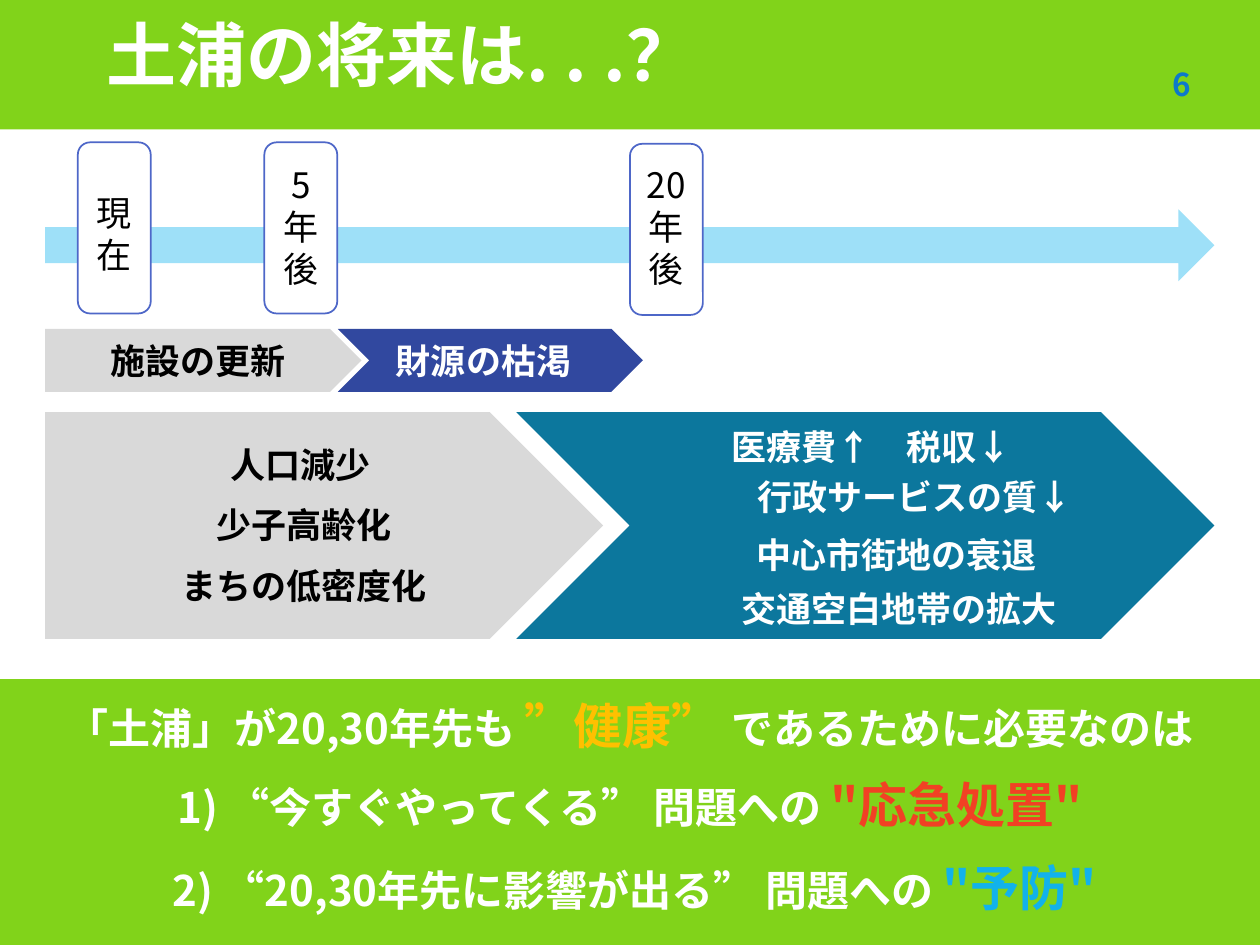
from dataclasses import dataclass

from lxml.etree import SubElement
from pptx import Presentation
from pptx.dml.color import RGBColor
from pptx.enum.shapes import MSO_SHAPE
from pptx.enum.text import MSO_ANCHOR, MSO_AUTO_SIZE, PP_ALIGN
from pptx.oxml.ns import qn
from pptx.slide import Slide
from pptx.util import Cm, Pt

FONT = "Noto Sans CJK JP"
COLOURS = {
    "white": "FFFFFF", "black": "000000", "green": "81D31A", "sky": "9EE0F8",
    "outline": "4E67C8", "navy": "31489F", "grey": "D9D9D9", "teal": "0C779D",
    "number": "0D79CA", "gold": "FFC000", "red": "F14124", "blue": "12B2EB",
}
PAGE_WIDTH, PAGE_HEIGHT = 25.4, 19.05
LEFT_EDGE = 0.91


@dataclass(frozen=True)
class Area:
    left: float
    top: float
    width: float
    height: float

    def lengths(self) -> tuple[Cm, Cm, Cm, Cm]:
        return Cm(self.left), Cm(self.top), Cm(self.width), Cm(self.height)


@dataclass(frozen=True)
class Block:
    kind: MSO_SHAPE
    area: Area
    fill: str
    line: str | None = None


@dataclass(frozen=True)
class Span:
    text: str
    colour: str = "white"
    size: int = 20
    bold: bool = True


@dataclass(frozen=True)
class Label:
    area: Area
    spans: tuple[Span, ...]


@dataclass(frozen=True)
class Marker:
    text: str
    left: float
    top: float
    text_top: float
    text_height: float


def colour(name: str) -> RGBColor:
    return RGBColor.from_string(COLOURS[name])


def apply(target: object, formats: dict[str, object]) -> None:
    for name, value in formats.items():
        setattr(target, name, value)


def draw_block(page: Slide, block: Block) -> None:
    shape = page.shapes.add_shape(block.kind, *block.area.lengths())
    shape.shadow.inherit = False
    shape.fill.solid()
    shape.fill.fore_color.rgb = colour(block.fill)
    if block.line:
        shape.line.color.rgb = colour(block.line)
        shape.line.width = Pt(1)
    else:
        shape.line.fill.background()


def draw_label(page: Slide, label: Label, frame_formats: dict[str, object] | None = None,
               para_formats: dict[str, object] | None = None) -> None:
    box = page.shapes.add_textbox(*label.area.lengths())
    apply(box.text_frame, {"word_wrap": True, "auto_size": MSO_AUTO_SIZE.SHAPE_TO_FIT_TEXT}
          | (frame_formats or {}))
    para = box.text_frame.paragraphs[0]
    apply(para, {"alignment": PP_ALIGN.CENTER} | (para_formats or {}))
    for span in label.spans:
        run = para.add_run()
        run.text = span.text
        apply(run.font, {"name": FONT, "size": Pt(span.size), "bold": span.bold})
        run.font.color.rgb = colour(span.colour)
        SubElement(run.font._element, qn("a:ea"), typeface=FONT)


def draw_marker(page: Slide, marker: Marker) -> None:
    width = 1.47
    frame = Area(marker.left, marker.top, width, 3.45)
    draw_block(page, Block(MSO_SHAPE.ROUNDED_RECTANGLE, frame, "white", "outline"))
    area = Area(marker.left, marker.text_top, width, marker.text_height)
    draw_label(page, Label(area, (Span(marker.text, "black", bold=False),)))


def draw_message(page: Slide, top: float, *spans: Span) -> None:
    draw_label(page, Label(Area(0, top, PAGE_WIDTH, 1.45), spans))


MARKERS = (
    Marker("現在", 1.57, 2.87, 3.73, 1.7),
    Marker("5年後", 5.33, 2.87, 3.18, 2.82),
    Marker("20年後", 12.7, 2.9, 3.18, 2.82),
)
STAGES = (
    Block(MSO_SHAPE.CHEVRON, Area(6.81, 6.63, 6.15, 1.27), "navy"),
    Block(MSO_SHAPE.PENTAGON, Area(LEFT_EDGE, 6.63, 6.38, 1.27), "grey"),
    Block(MSO_SHAPE.PENTAGON, Area(LEFT_EDGE, 8.31, 11.25, 4.57), "grey"),
    Block(MSO_SHAPE.CHEVRON, Area(10.41, 8.31, 14.07, 4.57), "teal"),
)
STAGE_LABELS = (
    ("施設の更新", "black", 1.52, 6.71, 4.95),
    ("財源の枯渇", "white", 7.26, 6.71, 4.98),
    ("人口減少", "black", LEFT_EDGE, 8.81, 10.29),
    ("少子高齢化", "black", 0.99, 10.03, 10.29),
    ("まちの低密度化", "black", 0.99, 11.25, 10.29),
    ("医療費↑　税収↓　", "white", 13.74, 8.46, 8.36),
    ("行政サービスの質↓", "white", 14.27, 9.47, 8.36),
    ("中心市街地の衰退", "white", 13.89, 10.64, 8.36),
    ("交通空白地帯の拡大", "white", 13.94, 11.71, 8.36),
)


def main() -> None:
    deck = Presentation()
    apply(deck, {"slide_width": Cm(PAGE_WIDTH), "slide_height": Cm(PAGE_HEIGHT)})
    page = deck.slides.add_slide(deck.slide_layouts[6])
    middle = {"vertical_anchor": MSO_ANCHOR.MIDDLE, "auto_size": MSO_AUTO_SIZE.NONE}

    draw_block(page, Block(MSO_SHAPE.RECTANGLE, Area(0, -0.08, PAGE_WIDTH, 2.69), "green"))
    draw_block(page, Block(MSO_SHAPE.RIGHT_ARROW, Area(LEFT_EDGE, 4.22, 23.57, 1.45), "sky"))
    for marker in MARKERS:
        draw_marker(page, marker)

    title = Label(Area(1.9, 0.33, 21.6, 1.78), (Span("土浦の将来は. . .？", size=40),))
    draw_label(page, title, middle, {"alignment": PP_ALIGN.LEFT, "line_spacing": 0.85})
    number = Label(Area(23.5, 1.14, 1.24, 1.09), (Span("6", "number", 18),))
    draw_label(page, number, middle | {"margin_left": Cm(0.13)}, {"alignment": PP_ALIGN.LEFT})

    for stage in STAGES:
        draw_block(page, stage)
    for text, ink, left, top, width in STAGE_LABELS:
        draw_label(page, Label(Area(left, top, width, 0.94), (Span(text, ink),)))

    draw_block(page, Block(MSO_SHAPE.RECTANGLE, Area(0, 13.69, PAGE_WIDTH, 5.36), "green"))
    draw_message(page, 13.89, Span("「土浦」が20,30年先も ", size=24),
                 Span("”健康” ", "gold", 28), Span("であるために必要なのは", size=24))
    draw_message(page, 15.49, Span("1) “今すぐやってくる” 問題への ", size=24),
                 Span('"応急処置"', "red", 28))
    draw_message(page, 17.17, Span(" 2) “20,30年先に影響が出る” 問題への ", size=24),
                 Span('"予防"', "blue", 28))
    deck.save("out.pptx")


if __name__ == "__main__":
    main()
